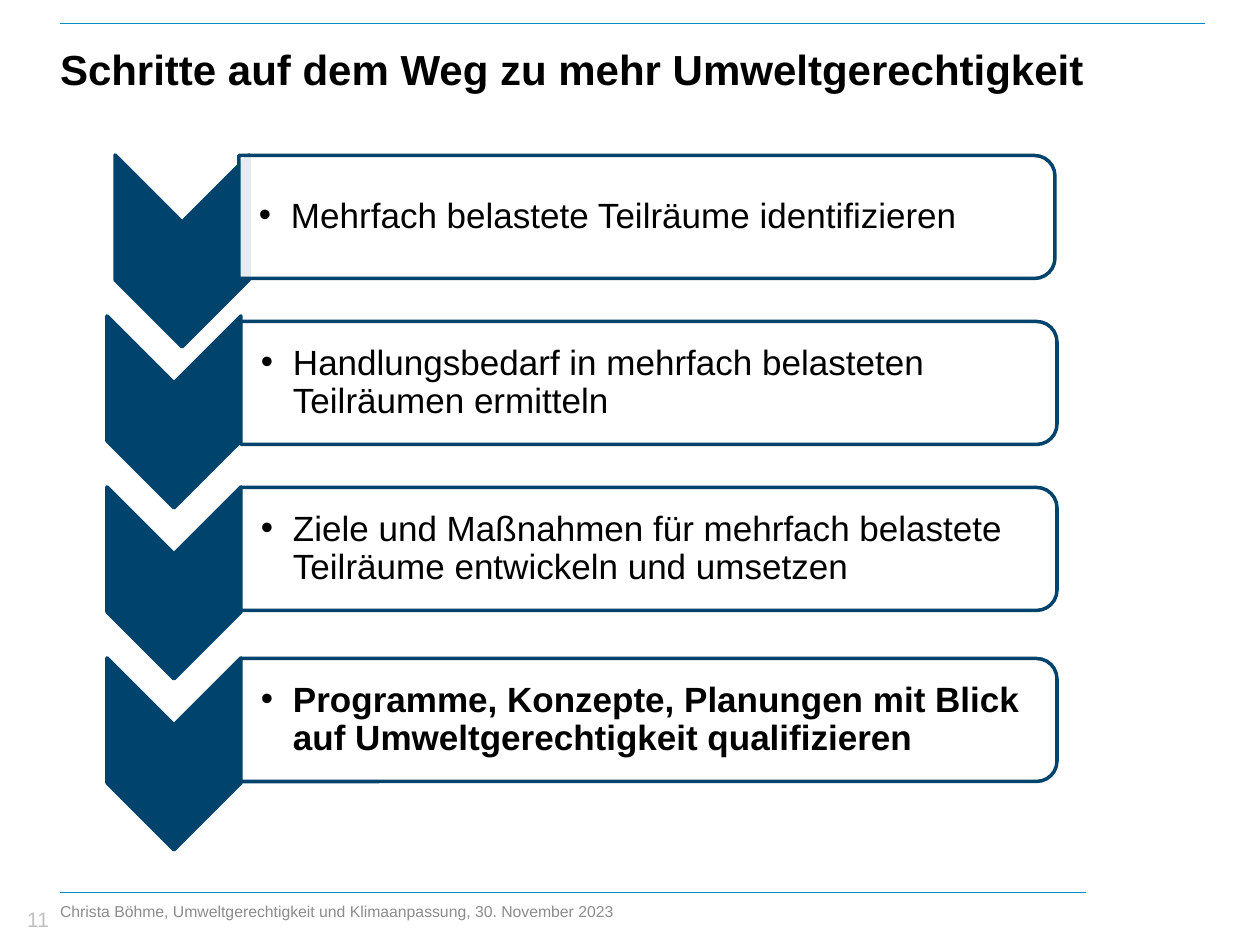
from dataclasses import dataclass

from pptx import Presentation
from pptx.dml.color import RGBColor
from pptx.enum.shapes import MSO_CONNECTOR, MSO_SHAPE as Shp
from pptx.enum.text import MSO_ANCHOR as Anchor, MSO_AUTO_SIZE as Auto, PP_ALIGN as Align
from pptx.oxml.ns import qn
from pptx.util import Emu, Pt
from lxml.etree import SubElement

PX = 914400 / 126
NAVY = RGBColor(0x00, 0x43, 0x6C)
CYAN = RGBColor(0x00, 0x8E, 0xC8)
WHITE = RGBColor(0xFF, 0xFF, 0xFF)
BLACK = RGBColor(0x00, 0x00, 0x00)
GREY = RGBColor(0x8C, 0x8C, 0x8C)
SILVER = RGBColor(0xC0, 0xC0, 0xC0)
FONT = "Arial"

CHEVRON_LENGTH, CHEVRON_WIDTH = 192, 134
BAR_LENGTH, BAR_HEIGHT = 816, 123
TEXT_WIDTH, TEXT_HEIGHT = 810, 112
INDENT = 32


@dataclass
class Step:
    text: str
    chevron_x: int
    chevron_y: int
    bar_x: int
    bar_y: int
    bold: bool = False


STEPS = [
    Step("Mehrfach belastete Teilräume identifizieren", 182, 251, 647, 217),
    Step("Handlungsbedarf in mehrfach belasteten Teilräumen ermitteln",
         174, 412, 649, 383),
    Step("Ziele und Maßnahmen für mehrfach belastete Teilräume entwickeln und umsetzen",
         174, 583, 649, 549),
    Step("Programme, Konzepte, Planungen mit Blick auf Umweltgerechtigkeit qualifizieren",
         174, 754, 649, 720, True),
]


def px(n: float) -> Emu:
    return Emu(round(n * PX))


def add_run(p, text: str, size: int, color: RGBColor, bold: bool = False) -> None:
    r = p.add_run()
    r.text = text
    r.font.name = FONT
    r.font.size = Pt(size)
    r.font.bold = bold
    r.font.color.rgb = color


def set_margins(tf, left: int = 0, other: int = 0) -> None:
    tf.margin_left = px(left)
    tf.margin_top = tf.margin_right = tf.margin_bottom = px(other)


def add_text(s, x: int, y: int, w: int, h: int, anchor=Anchor.TOP, wrap: bool = True):
    tf = s.shapes.add_textbox(px(x), px(y), px(w), px(h)).text_frame
    tf.word_wrap = wrap
    tf.vertical_anchor = anchor
    set_margins(tf)
    return tf


def add_rule(s, x1: int, x2: int, y: int) -> None:
    c = s.shapes.add_connector(MSO_CONNECTOR.STRAIGHT, px(x1), px(y), px(x2), px(y))
    c.line.color.rgb = CYAN
    c.line.width = Pt(0.5)
    SubElement(c._element.spPr, qn("a:effectLst"))


def add_turned(s, kind, cx: int, cy: int, w: int, h: int, fill: RGBColor):
    sp = s.shapes.add_shape(kind, px(cx - w / 2), px(cy - h / 2), px(w), px(h))
    sp.rotation = 90
    sp.shadow.inherit = False
    sp.fill.solid()
    sp.fill.fore_color.rgb = fill
    sp.line.color.rgb = NAVY
    sp.line.width = Pt(2)
    return sp


def add_step(s, step: Step) -> None:
    add_turned(s, Shp.CHEVRON, step.chevron_x, step.chevron_y,
               CHEVRON_LENGTH, CHEVRON_WIDTH, NAVY)
    bar = add_turned(s, Shp.ROUND_2_SAME_RECTANGLE, step.bar_x, step.bar_y,
                     BAR_HEIGHT, BAR_LENGTH, WHITE)
    color = bar._element.spPr.find(qn("a:solidFill")).find(qn("a:srgbClr"))
    SubElement(color, qn("a:alpha"), val="90000")

    tf = add_text(s, step.bar_x - BAR_LENGTH // 2, step.bar_y - TEXT_HEIGHT // 2,
                  TEXT_WIDTH, TEXT_HEIGHT, Anchor.MIDDLE)
    set_margins(tf, 20, 1)
    p = tf.paragraphs[0]
    pPr = p._p.get_or_add_pPr()
    pPr.set("marL", str(px(INDENT)))
    pPr.set("indent", str(-px(INDENT)))
    SubElement(pPr, qn("a:buFont"), typeface=FONT)
    SubElement(pPr, qn("a:buChar"), char="•")
    p.line_spacing = 0.9
    p.space_after = Pt(3)
    add_run(p, step.text, 20, BLACK, step.bold)


def add_title(s, text: str) -> None:
    sp = s.shapes.title
    sp.left, sp.top, sp.width, sp.height = px(60), px(28), px(1145), px(77)
    tf = sp.text_frame
    tf.auto_size = Auto.NONE
    tf.word_wrap = True
    tf.vertical_anchor = Anchor.MIDDLE
    set_margins(tf)
    p = tf.paragraphs[0]
    p.alignment = Align.LEFT
    p.line_spacing = 1.1
    add_run(p, text, 24, BLACK, True)


def main() -> None:
    prs = Presentation()
    prs.slide_width, prs.slide_height = px(1260), px(945)
    s = prs.slides.add_slide(prs.slide_layouts[5])

    p = add_text(s, 5, 888, 44, 44, Anchor.BOTTOM, False).paragraphs[0]
    p.alignment = Align.RIGHT
    add_run(p, "11", 12, SILVER)
    add_rule(s, 60, 1086, 892)
    add_rule(s, 60, 1205, 23)
    add_title(s, "Schritte auf dem Weg zu mehr Umweltgerechtigkeit")
    p = add_text(s, 60, 902, 1027, 42).paragraphs[0]
    add_run(p, "Christa Böhme, Umweltgerechtigkeit und Klimaanpassung, 30. November 2023",
            9, GREY)
    for step in STEPS:
        add_step(s, step)

    prs.save("out.pptx")


if __name__ == "__main__":
    main()
